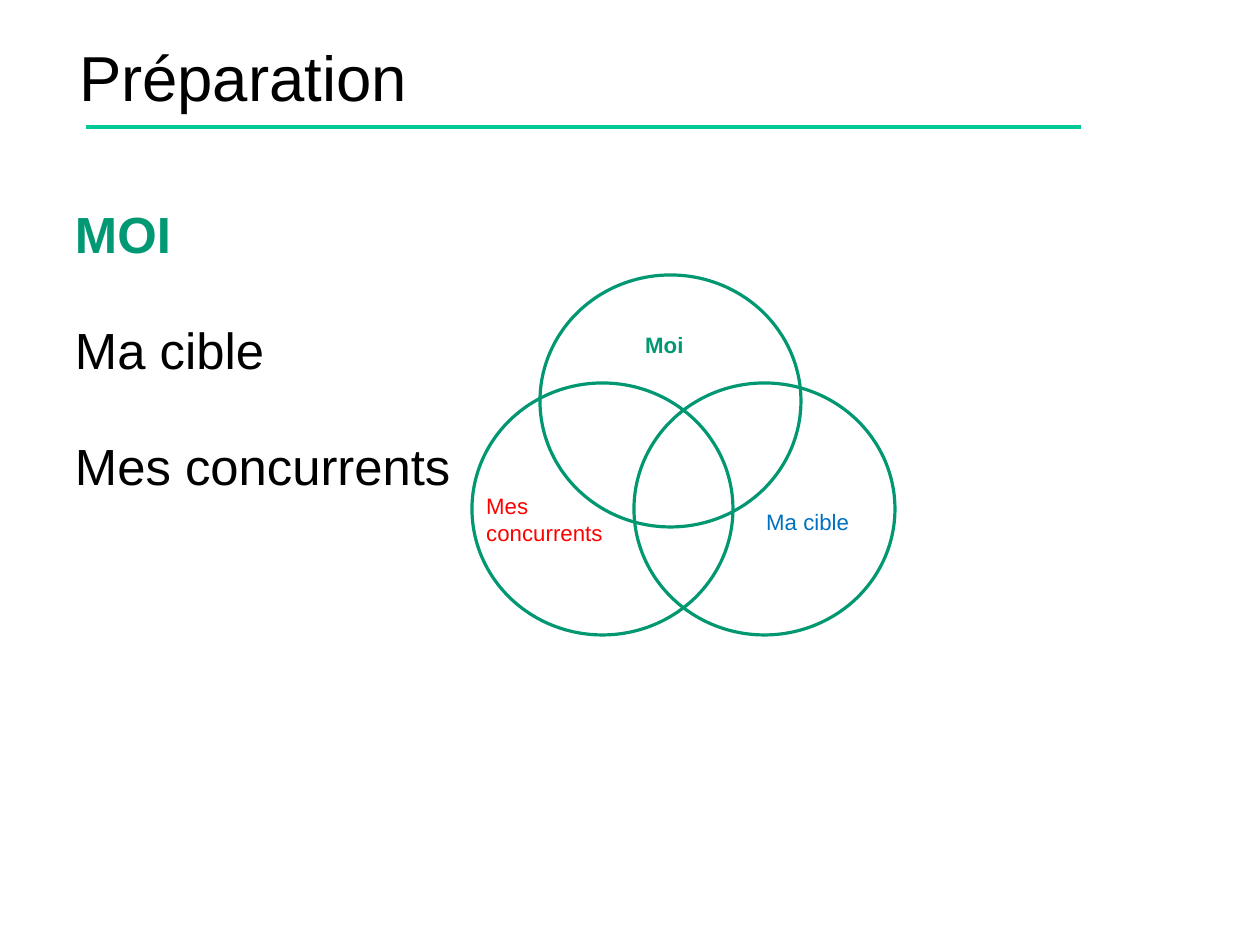
from lxml.etree import SubElement
from pptx import Presentation
from pptx.dml.color import RGBColor
from pptx.enum.shapes import MSO_CONNECTOR, MSO_SHAPE
from pptx.enum.text import MSO_ANCHOR
from pptx.oxml.ns import qn
from pptx.util import Pt

PX = 8000  # EMU per px
BLACK = RGBColor(0x00, 0x00, 0x00)
GREEN = RGBColor(0x00, 0x99, 0x73)
CIRCLE_GREEN = RGBColor(0x00, 0x97, 0x71)
RULE_GREEN = RGBColor(0x00, 0xC8, 0x96)
BLUE = RGBColor(0x00, 0x70, 0xC0)
RED = RGBColor(0xFF, 0x00, 0x00)


def px(*lengths):
    return [n * PX for n in lengths]


def style(p, size, color, bold=False):
    for r in p.runs:
        r.font.name = "Arial"
        r.font.size = Pt(size)
        r.font.bold = bold
        r.font.color.rgb = color


def add_text_frame(s, box, inset=True):
    tf = s.shapes.add_textbox(*px(*box)).text_frame
    tf.word_wrap = True
    if not inset:
        tf.margin_left = tf.margin_right = tf.margin_top = tf.margin_bottom = 0
    return tf


def add_title(s, box, text):
    x, y, w, h = box
    # Rule under the title
    rule = s.shapes.add_connector(
        MSO_CONNECTOR.STRAIGHT, *px(x + 7, y + h + 1, x + 1002, y + h + 1))
    rule.line.color.rgb = RULE_GREEN
    rule.line.width = Pt(2.25)
    SubElement(rule._element.spPr, qn("a:effectLst"))
    # Title text
    tf = add_text_frame(s, box, inset=False)
    tf.vertical_anchor = MSO_ANCHOR.MIDDLE
    tf.text = text
    style(tf.paragraphs[0], 40, BLACK)


def add_topics(s, box, topics, current):
    tf = add_text_frame(s, box, inset=False)
    tf.text = "\n".join(topics)
    for i, p in enumerate(tf.paragraphs):
        if i:
            p.space_before = Pt(34.7)
        active = p.text == current
        style(p, 32, GREEN if active else BLACK, active)


def add_venn(s, box):
    x, y, w, h = box
    circle_w, circle_h = 261, 252
    low = h - circle_h
    # Overlapping circles
    for dx, dy in ((68, 0), (w - circle_w, low), (0, low)):
        circle = s.shapes.add_shape(
            MSO_SHAPE.OVAL, *px(x + dx, y + dy, circle_w, circle_h))
        circle.shadow.inherit = False
        circle.fill.background()
        circle.line.color.rgb = CIRCLE_GREEN
        circle.line.width = Pt(2)
    # Circle labels
    for text, dx, dy, label_w, label_h, color, bold in (
            ("Moi", 162, 51, 125, 39, GREEN, True),
            ("Ma cible", 283, 228, 162, 46, BLUE, False),
            ("Mes concurrents", 3, 212, 171, 81, RED, False)):
        tf = add_text_frame(s, (x + dx, y + dy, label_w, label_h))
        tf.text = text
        style(tf.paragraphs[0], 14, color, bold)


def main():
    prs = Presentation()
    prs.slide_width, prs.slide_height = px(1260, 945)
    s = prs.slides.add_slide(prs.slide_layouts[6])
    add_title(s, (79, 27, 1029, 99), "Préparation")
    add_topics(s, (75, 203, 1000, 563),
               ("MOI", "Ma cible", "Mes concurrents"), "MOI")
    add_venn(s, (472, 275, 423, 360))
    prs.save("out.pptx")


if __name__ == "__main__":
    main()
